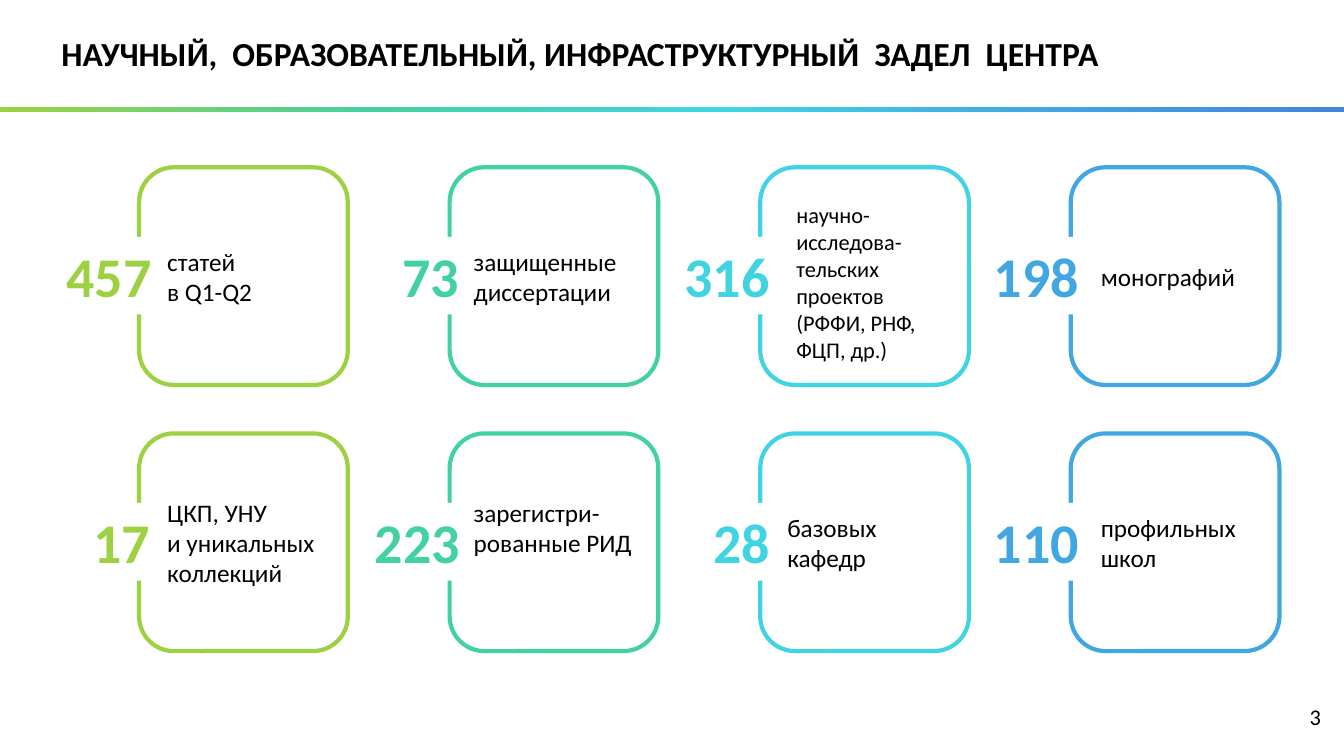
from dataclasses import dataclass

from lxml.etree import SubElement
from pptx import Presentation
from pptx.dml.color import RGBColor
from pptx.enum.shapes import MSO_SHAPE as Shape
from pptx.enum.text import MSO_ANCHOR as Anchor, MSO_AUTO_SIZE as AutoSize, PP_ALIGN as Align
from pptx.oxml.ns import qn
from pptx.util import Pt

EMU_PER_PX = 9144
SLIDE_WIDTH, SLIDE_HEIGHT = 1333, 750
CARD_LEFT, CARD_TOP = 138, 166
CARD_WIDTH, CARD_HEIGHT = 207, 216
COLUMN_STEP, ROW_STEP = 308, 264
NUMBER_OFFSET, NUMBER_HEIGHT = 69, 77
NUMBER_WIDTHS = {2: 83, 3: 114}


@dataclass(frozen=True)
class Theme:
    font: str = "Calibri"
    text: str = "000000"
    background: str = "FFFFFF"
    columns: tuple = ("9CD141", "43D1A1", "40D4E2", "41A7E1")
    bar_end: str = "4383DD"
    bar_stops: tuple = (0, 28, 54, 77, 100)
    title_size: int = 24
    number_size: int = 40
    label_size: int = 18
    small_size: int = 16
    card_line: int = 3


THEME = Theme()


@dataclass(frozen=True)
class Fact:
    """One figure with its label; label_box is left, top, width, height."""
    number: str
    number_left: int
    label: str
    label_box: tuple
    label_size: int = THEME.label_size


FACT_ROWS = (
    (
        Fact("457", 56, "статей \vв Q1-Q2", (156, 239, 124, 71)),
        Fact("73", 389, "защищенные диссертации", (460, 239, 178, 71)),
        Fact("316", 669, "научно-исследова-тельских проектов\n(РФФИ, РНФ, ФЦП, др.)",
             (780, 195, 179, 172), THEME.small_size),
        Fact("198", 976, "монографий", (1082, 254, 168, 40)),
    ),
    (
        Fact("17", 83, "ЦКП, УНУ \vи уникальных коллекций", (156, 488, 188, 101)),
        Fact("223", 362, "зарегистри-рованные РИД", (460, 488, 188, 101)),
        Fact("28", 698, "базовых\vкафедр", (771, 503, 168, 71)),
        Fact("110", 976, "профильных школ", (1082, 503, 168, 71)),
    ),
)


def px(length):
    return round(length * EMU_PER_PX)


def scaled(box):
    return [px(length) for length in box]


def write_text(shape, text, size=THEME.label_size, color=THEME.text, bold=False,
               align=Align.LEFT, anchor=Anchor.TOP, wrap=True,
               auto_size=AutoSize.SHAPE_TO_FIT_TEXT, line_spacing=None):
    frame = shape.text_frame
    frame.text = text
    frame.word_wrap = wrap
    frame.auto_size = auto_size
    frame.vertical_anchor = anchor
    for paragraph in frame.paragraphs:
        paragraph.alignment = align
        paragraph.line_spacing = line_spacing
        for run in paragraph.runs:
            run.font.name = THEME.font
            run.font.size = Pt(size)
            run.font.bold = bold
            run.font.color.rgb = RGBColor.from_string(color)


def add_title(slide, text, box):
    title = slide.shapes.title
    title.left, title.top, title.width, title.height = scaled(box)
    write_text(title, text, size=THEME.title_size, bold=True, anchor=Anchor.MIDDLE,
               auto_size=AutoSize.NONE, line_spacing=0.9)


def add_text(slide, text, box, **text_format):
    write_text(slide.shapes.add_textbox(*scaled(box)), text, **text_format)


def add_plain_shape(slide, kind, box):
    """Add a shape with no shadow, line or fill."""
    shape = slide.shapes.add_shape(kind, *scaled(box))
    shape.shadow.inherit = False
    shape.fill.background()
    shape.line.fill.background()
    return shape


def add_card(slide, left, top, color):
    card = add_plain_shape(slide, Shape.ROUNDED_RECTANGLE, (left, top, CARD_WIDTH, CARD_HEIGHT))
    card.line.color.rgb = RGBColor.from_string(color)
    card.line.width = Pt(THEME.card_line)


def add_number(slide, number, left, top, color):
    """Add a figure on a background patch that opens the card's left side."""
    box = (left, top, NUMBER_WIDTHS[len(number)], NUMBER_HEIGHT)
    patch = add_plain_shape(slide, Shape.RECTANGLE, box)
    patch.fill.solid()
    patch.fill.fore_color.rgb = RGBColor.from_string(THEME.background)
    write_text(patch, number, size=THEME.number_size, color=color, bold=True, wrap=False)


def add_gradient_bar(slide, box):
    bar = add_plain_shape(slide, Shape.RECTANGLE, box)
    bar.fill.gradient()
    bar.fill.gradient_angle = 0
    stop_list = next(bar.element.iter(qn("a:gsLst")))
    for stop in list(stop_list):
        stop_list.remove(stop)
    for percent, color in zip(THEME.bar_stops, (*THEME.columns, THEME.bar_end)):
        stop = SubElement(stop_list, qn("a:gs"), pos=str(percent * 1000))
        SubElement(stop, qn("a:srgbClr"), val=color)


def add_fact(slide, fact, row, column):
    color = THEME.columns[column]
    top = CARD_TOP + row * ROW_STEP
    add_card(slide, CARD_LEFT + column * COLUMN_STEP, top, color)
    add_number(slide, fact.number, fact.number_left, top + NUMBER_OFFSET, color)
    add_text(slide, fact.label, fact.label_box, size=fact.label_size)


def main():
    presentation = Presentation()
    presentation.slide_width = px(SLIDE_WIDTH)
    presentation.slide_height = px(SLIDE_HEIGHT)
    slide = presentation.slides.add_slide(presentation.slide_layouts.get_by_name("Title Only"))

    add_title(slide, "НАУЧНЫЙ,  ОБРАЗОВАТЕЛЬНЫЙ, ИНФРАСТРУКТУРНЫЙ  ЗАДЕЛ  ЦЕНТРА",
              (51, 0, 1190, 111))
    add_text(slide, "3", (1020, 691, 300, 40), size=THEME.small_size,
             align=Align.RIGHT, anchor=Anchor.MIDDLE, auto_size=AutoSize.NONE)
    for row, facts in enumerate(FACT_ROWS):
        for column, fact in enumerate(facts):
            add_fact(slide, fact, row, column)
    add_gradient_bar(slide, (0, 106, SLIDE_WIDTH, 5))

    presentation.save("out.pptx")


if __name__ == "__main__":
    main()
